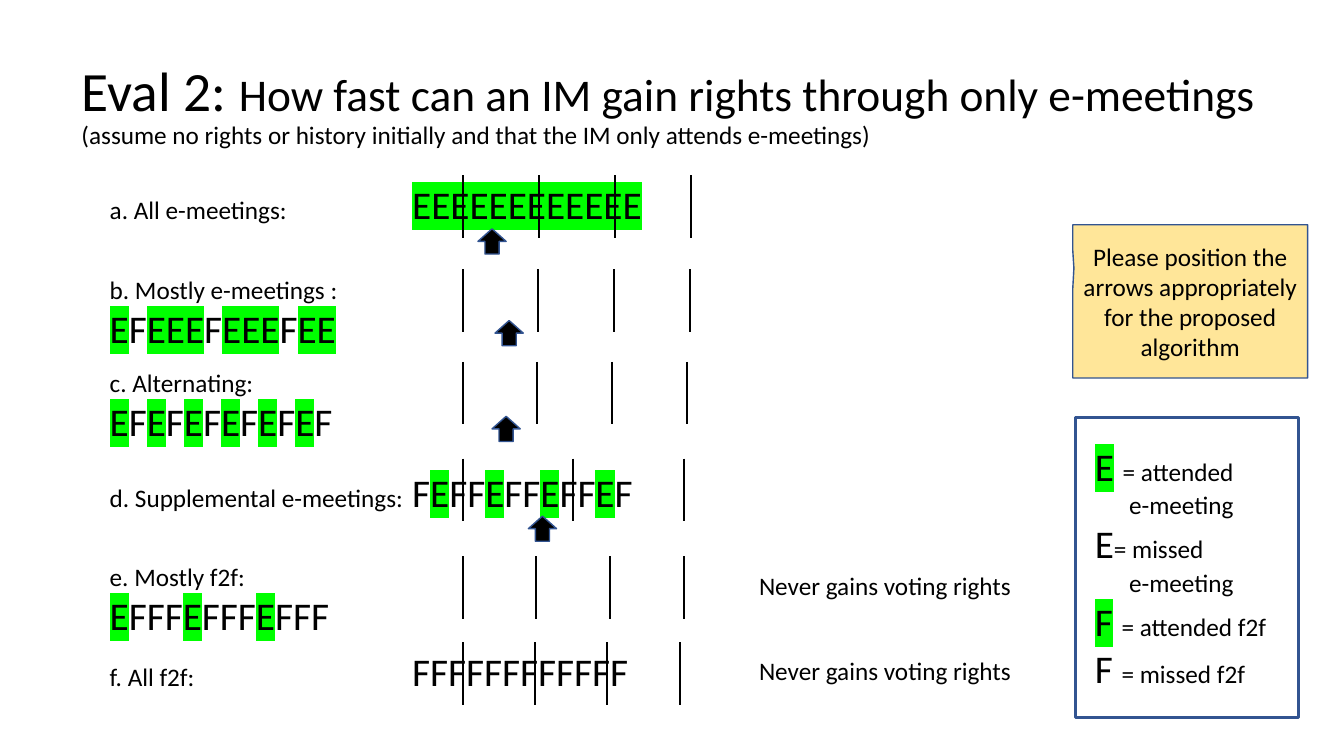
from itertools import groupby

from lxml import etree
from pptx import Presentation
from pptx.dml.color import RGBColor
from pptx.enum.shapes import MSO_CONNECTOR, MSO_SHAPE
from pptx.enum.text import MSO_ANCHOR, PP_ALIGN
from pptx.oxml.ns import qn
from pptx.util import Inches, Pt

BLACK = RGBColor(0x00, 0x00, 0x00)
BLUE = RGBColor(0x32, 0x54, 0x91)
SAND = RGBColor(0xFF, 0xE6, 0x99)
GREEN = "00FF00"
FONT = "Calibri"
SMALL, LARGE = 18, 28

ROW_LEFT, ROW_WIDTH, ROW_HEIGHT = 0.99, 6.03, 0.57
LETTER_TAB = 3
TICK_LEFT, TICK_HEIGHT = 4.59, 0.62
ARROW_WIDTH, ARROW_HEIGHT = 0.28, 0.25


def add_text(left, top, width, height):
    """Add a wrapping text box and return its text frame."""
    frame = slide.shapes.add_textbox(
        Inches(left), Inches(top), Inches(width), Inches(height)).text_frame
    frame.word_wrap = True
    return frame


def add_run(paragraph, text, size, marked=False):
    """Append a black run, highlighted in green when marked."""
    run = paragraph.add_run()
    run.text = text
    run.font.size = Pt(size)
    run.font.color.rgb = BLACK
    if marked:
        highlight = etree.SubElement(run.font._element, qn("a:highlight"))
        etree.SubElement(highlight, qn("a:srgbClr"), val=GREEN)
    run.font.name = FONT


prs = Presentation()
prs.slide_width, prs.slide_height = Inches(13.33), Inches(7.5)
slide = prs.slides.add_slide(prs.slide_layouts[6])

# Title
title = add_text(0.71, 0.43, 11.92, 1.26)
title.vertical_anchor = MSO_ANCHOR.MIDDLE
heading = title.paragraphs[0]
heading.line_spacing = 0.9
add_run(heading, "Eval 2: ", 39.6)
add_run(heading, "How fast can an IM gain rights through only e-meetings", 32.4)
heading.add_line_break()
add_run(heading, "(assume no rights or history initially and that the IM only "
        "attends e-meetings)", SMALL)

# Attendance rows: label, letters, letters on own line, top, tick count, tick gap
attendance = [
    ("a. All e-meetings: ", "EEEEEEEEEEEE", False, 1.74, 4, 0.755),
    ("b. Mostly e-meetings : ", "EFEEEFEEEFEE", True, 2.67, 4, 0.75),
    ("c. Alternating: ", "EFEFEFEFEFEF", True, 3.59, 4, 0.74),
    ("d. Supplemental e-meetings: ", "FEFFEFFEFFEF", False, 4.6, 3, 1.095),
    ("e. Mostly f2f: ", "EFFFEFFFEFFF", True, 5.52, 4, 0.73),
    ("f. All f2f: ", "FFFFFFFFFFFF", False, 6.37, 4, 0.717),
]
for label, letters, own_line, top, tick_count, tick_gap in attendance:
    row = add_text(ROW_LEFT, top, ROW_WIDTH, ROW_HEIGHT).paragraphs[0]
    if own_line:
        add_run(row, label, SMALL)
        row.add_line_break()
    else:
        tabs = etree.SubElement(row._p.get_or_add_pPr(), qn("a:tabLst"))
        etree.SubElement(tabs, qn("a:tab"), pos=str(Inches(LETTER_TAB)), algn="l")
        add_run(row, label + "\t", SMALL)
    for letter, streak in groupby(letters):
        add_run(row, "".join(streak), LARGE, marked=letter == "E")

    tick_top = top + (ROW_HEIGHT - TICK_HEIGHT if tick_count == 3 else 0)
    for i in range(tick_count):
        x = Inches(TICK_LEFT + i * tick_gap)
        tick = slide.shapes.add_connector(
            MSO_CONNECTOR.STRAIGHT, x, Inches(tick_top),
            x, Inches(tick_top + TICK_HEIGHT))
        tick.line.color.rgb = BLACK
        tick.line.width = Pt(1.5)
        etree.SubElement(tick._element.spPr, qn("a:effectLst"))

# Arrows where voting rights are gained
for left, top in [(4.74, 2.27), (4.91, 3.18), (4.88, 4.13), (5.24, 5.12)]:
    arrow = slide.shapes.add_shape(
        MSO_SHAPE.UP_ARROW, Inches(left), Inches(top),
        Inches(ARROW_WIDTH), Inches(ARROW_HEIGHT))
    arrow.shadow.inherit = False
    arrow.fill.solid()
    arrow.fill.fore_color.rgb = BLACK
    arrow.line.color.rgb = BLUE
    arrow.line.width = Pt(1)

for top in (5.61, 6.45):
    verdict = add_text(7.43, top, 2.93, 0.4).paragraphs[0]
    add_run(verdict, "Never gains voting rights", SMALL)

# Request
request = slide.shapes.add_shape(
    MSO_SHAPE.RECTANGULAR_CALLOUT, Inches(10.64), Inches(2.23),
    Inches(2.33), Inches(1.52))
request.adjustments[0], request.adjustments[1] = -0.495, -0.217
request.shadow.inherit = False
request.fill.solid()
request.fill.fore_color.rgb = SAND
request.line.color.rgb = BLUE
request.line.width = Pt(1)
wording = request.text_frame
wording.word_wrap = True
wording.vertical_anchor = MSO_ANCHOR.MIDDLE
for i, sentence in enumerate(["Please position the arrows appropriately",
                              "for the proposed algorithm"]):
    paragraph = wording.add_paragraph() if i else wording.paragraphs[0]
    paragraph.alignment = PP_ALIGN.CENTER
    add_run(paragraph, sentence, SMALL)

# Legend: letter, highlighted, gap after the letter, meaning
legend_lines = [
    ("E", True, " ", "= attended"),
    ("", False, "", "e-meeting"),
    ("E", False, "", "= missed"),
    ("", False, "", "e-meeting"),
    ("F", True, " ", "= attended f2f"),
    ("F", False, " ", "= missed f2f"),
]
legend = add_text(10.76, 4.34, 2.1, 2.59)
for i, (letter, marked, gap, meaning) in enumerate(legend_lines):
    paragraph = legend.add_paragraph() if i else legend.paragraphs[0]
    if letter:
        add_run(paragraph, letter, LARGE, marked)
    else:
        paragraph._p.get_or_add_pPr().set("marL", str(Inches(0.34)))
    if gap:
        add_run(paragraph, gap, LARGE)
    add_run(paragraph, meaning, SMALL)

frame = slide.shapes.add_shape(
    MSO_SHAPE.RECTANGLE, Inches(10.67), Inches(4.14), Inches(2.21), Inches(2.98))
frame.shadow.inherit = False
frame.fill.background()
frame.line.color.rgb = BLUE
frame.line.width = Pt(2.25)

prs.save("out.pptx")
